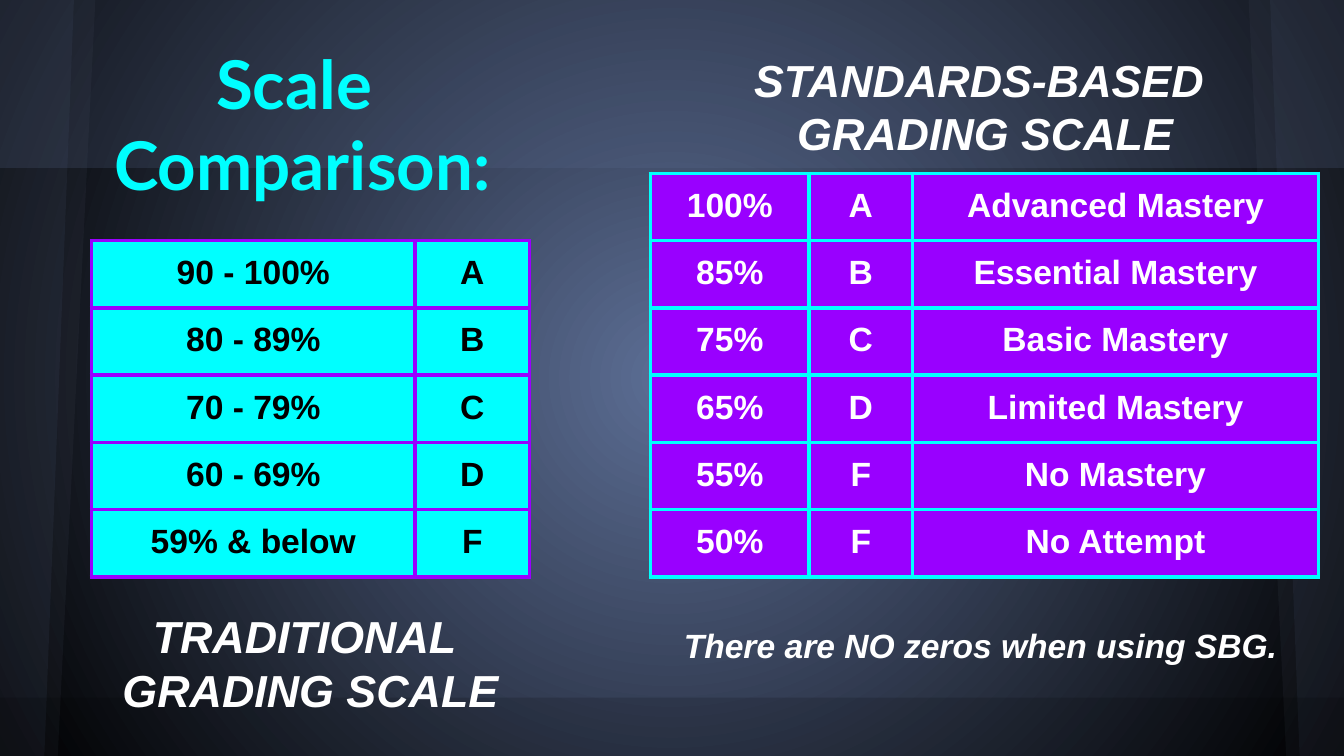
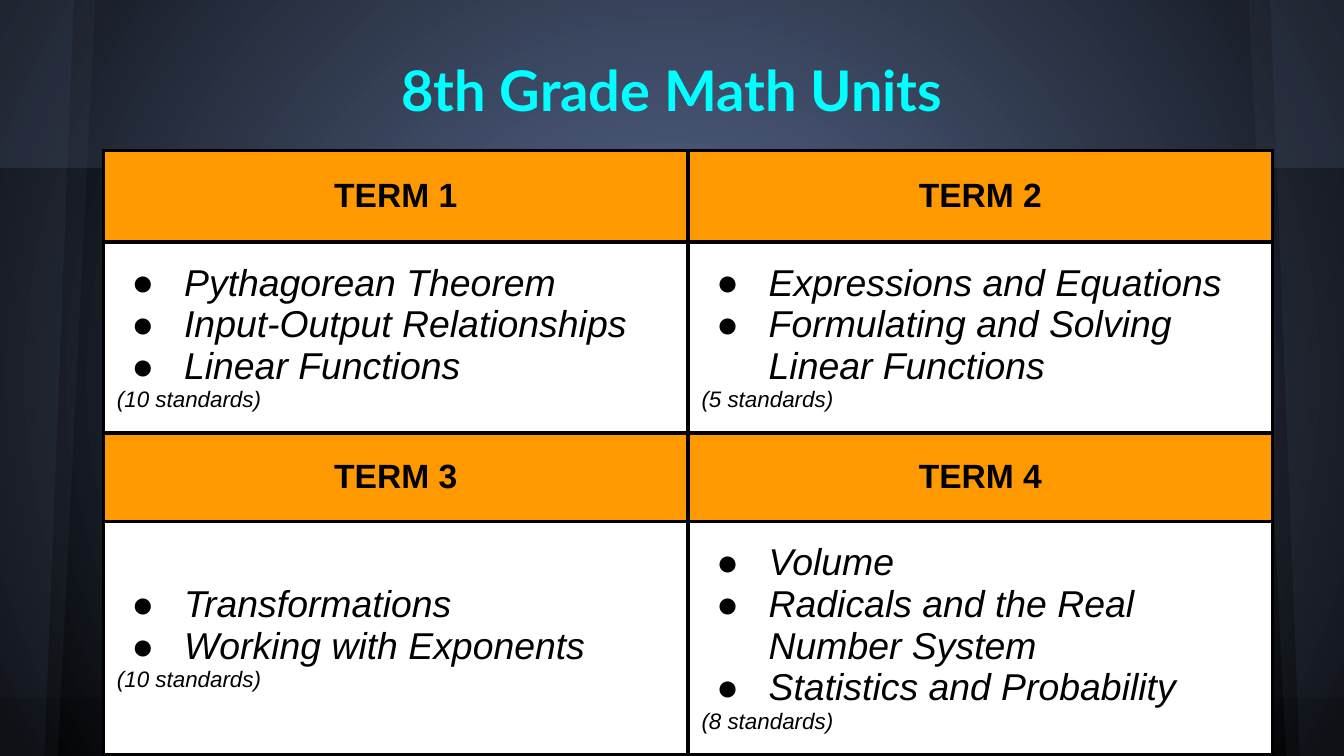
from lxml import etree
from pptx import Presentation
from pptx import util as u
from pptx.dml.color import RGBColor
from pptx.enum import shapes, text
from pptx.oxml import parse_xml
from pptx.oxml.ns import qn, nsdecls

WIDE = 10
HIGH = WIDE * 9 / 16
CYAN, VIOLET, ORANGE = "00FFFF", "9900FF", "FF9900"
BLACK, WHITE, SLATE, STEEL = "000000", "FFFFFF", "5C6E95", "5A6378"
MID = text.MSO_ANCHOR.MIDDLE
CENTER, LEFT = text.PP_ALIGN.CENTER, text.PP_ALIGN.LEFT

BANDS = [(0, 1.25, SLATE, 20), (5.19, HIGH - 5.19, BLACK, 15)]
SIDES = [(0.71, 0.43, STEEL), (0.55, 0.33, SLATE)]

OLD = [("90 - 100%", "A"), ("80 - 89%", "B"), ("70 - 79%", "C"),
       ("60 - 69%", "D"), ("59% & below", "F")]
NEW = [("100%", "A", "Advanced Mastery"), ("85%", "B", "Essential Mastery"),
       ("75%", "C", "Basic Mastery"), ("65%", "D", "Limited Mastery"),
       ("55%", "F", "No Mastery"), ("50%", "F", "No Attempt")]
SCALES = [
    ((0.68, 1.79, 3.26, 2.4), [2.41, 0.85], OLD, CYAN, VIOLET, BLACK),
    ((4.84, 1.29, 4.97, 2.88), [1.18, 0.77, 3.02], NEW, VIOLET, CYAN, WHITE),
]
LABELS = [
    ((0.68, 4.43, 3.26, 0.94), ["TRADITIONAL ", "GRADING SCALE"], 24, CENTER),
    ((4.86, 0.29, 4.94, 0.94), ["STANDARDS-BASED ", "GRADING SCALE"], 24, CENTER),
    ((4.99, 4.55, 4.66, 0.53), ["There are NO zeros when using SBG."], 18, LEFT),
]
TERMS = [
    ("TERM 1", ["Pythagorean Theorem", "Input-Output Relationships",
                "Linear Functions"], "(10 standards)"),
    ("TERM 2", ["Expressions and Equations",
                "Formulating and Solving Linear Functions"], "(5 standards)"),
    ("TERM 3", ["Transformations", "Working with Exponents"], "(10 standards)"),
    ("TERM 4", ["Volume", "Radicals and the Real Number System",
                "Statistics and Probability"], "(8 standards)"),
]


def color(code):
    return RGBColor.from_string(code)


def inches(box):
    return [u.Inches(n) for n in box]


def style(para, size, code, font="Arial", bold=True, slant=False, align=CENTER):
    para.alignment = align
    for run in para.runs:
        face = run.font
        face.size, face.name = u.Pt(size), font
        face.bold, face.italic = bold, slant
        face.color.rgb = color(code)


def pad(frame):
    frame.margin_left = frame.margin_right = u.Inches(0.1)
    frame.margin_top = frame.margin_bottom = u.Inches(0.1)


def write(slide, box, lines, size, code, anchor=text.MSO_ANCHOR.TOP, **look):
    frame = slide.shapes.add_textbox(*inches(box)).text_frame
    frame.word_wrap = True
    frame.vertical_anchor = anchor
    pad(frame)
    frame.text = "\n".join(lines)
    for para in frame.paragraphs:
        style(para, size, code, **look)


def title(slide, box, lines, size):
    write(slide, box, lines, size, CYAN, MID, font="Lato")


def tint(shape, code, alpha):
    shape.shadow.inherit = False
    shape.line.fill.background()
    shape.fill.solid()
    shape.fill.fore_color.rgb = color(code)
    tone = shape.fill._xPr.find(".//" + qn("a:srgbClr"))
    etree.SubElement(tone, qn("a:alpha"), val=str(alpha * 1000))


def backdrop(slide):
    slide._element.cSld.insert(0, parse_xml(
        f'<p:bg {nsdecls("p", "a")}><p:bgPr><a:gradFill rotWithShape="0"><a:gsLst>'
        f'<a:gs pos="0"><a:srgbClr val="{SLATE}"/></a:gs>'
        f'<a:gs pos="100000"><a:srgbClr val="{BLACK}"/></a:gs></a:gsLst>'
        '<a:path path="circle"><a:fillToRect l="50000" t="50000" r="50000" b="50000"/>'
        '</a:path></a:gradFill><a:effectLst/></p:bgPr></p:bg>'))


def band(slide, top, tall, code, alpha):
    box = inches((0, top, WIDE, tall))
    tint(slide.shapes.add_shape(shapes.MSO_SHAPE.RECTANGLE, *box), code, alpha)


def start(deck):
    slide = deck.slides.add_slide(deck.slide_layouts[6])
    backdrop(slide)
    band(slide, *BANDS[0])
    for edge, way in ((0, 1), (WIDE, -1)):
        for top, foot, code in SIDES:
            spots = [(edge + way * top, 0), (edge + way * foot, HIGH), (edge, HIGH)]
            pen = slide.shapes.build_freeform(u.Inches(edge), 0)
            pen.add_line_segments([inches(spot) for spot in spots], close=True)
            tint(pen.convert_to_shape(), code, 10)
    band(slide, *BANDS[1])
    return slide


def paint(cell, fill, rim):
    pad(cell)
    props = cell._tc.get_or_add_tcPr()
    for side in "LRTB":
        line = etree.SubElement(props, qn("a:ln" + side), w=str(u.Pt(2.25)))
        solid = etree.SubElement(line, qn("a:solidFill"))
        etree.SubElement(solid, qn("a:srgbClr"), val=rim)
    cell.fill.solid()
    cell.fill.fore_color.rgb = color(fill)


def grid(slide, box, cols, rows):
    frame = slide.shapes.add_table(len(rows), len(cols), *inches(box))
    table = frame.table
    table.first_row = table.horz_banding = False
    for col, wide in zip(table.columns, cols):
        col.width = u.Inches(wide)
    for row, tall in zip(table.rows, rows):
        row.height = u.Inches(tall)
    frame.width, frame.height = inches(box[2:])
    return table


def bullet(para):
    props = para._p.get_or_add_pPr()
    props.set("marL", str(u.Inches(0.5)))
    props.set("indent", str(u.Inches(-0.39)))
    tone = etree.SubElement(props, qn("a:buClr"))
    etree.SubElement(tone, qn("a:srgbClr"), val=BLACK)
    etree.SubElement(props, qn("a:buSzPct"), val="100000")
    etree.SubElement(props, qn("a:buFont"), typeface="Arial")
    etree.SubElement(props, qn("a:buChar"), char="●")


def compare(deck):
    slide = start(deck)
    title(slide, (0.25, 0.17, 4, 1.49), ["Scale ", "Comparison:"], 36)
    for box, cols, data, fill, rim, ink in SCALES:
        table = grid(slide, box, cols, [0.42] * len(data))
        for r, row in enumerate(data):
            for c, word in enumerate(row):
                cell = table.cell(r, c)
                paint(cell, fill, rim)
                cell.text_frame.text = word
                style(cell.text_frame.paragraphs[0], 18, ink)
    for box, lines, size, align in LABELS:
        write(slide, box, lines, size, WHITE, slant=True, align=align)


def units(deck):
    slide = start(deck)
    title(slide, (0.5, 0.19, 9, 0.94), ["8th Grade Math Units"], 30)
    table = grid(slide, (0.77, 1.12, 8.71, 4.39), [4.35] * 2,
                 [0.68, 1.42, 0.66, 1.42])
    for n, (name, topics, note) in enumerate(TERMS):
        row, col = n // 2 * 2, n % 2
        head, body = table.cell(row, col), table.cell(row + 1, col)
        for cell, fill in ((head, ORANGE), (body, WHITE)):
            paint(cell, fill, BLACK)
            cell.vertical_anchor = MID
        head.text_frame.text = name
        style(head.text_frame.paragraphs[0], 18, BLACK)
        body.text_frame.text = "\n".join(topics + [note])
        *items, last = body.text_frame.paragraphs
        for para in items:
            style(para, 20, BLACK, bold=False, slant=True, align=LEFT)
            bullet(para)
        style(last, 12, BLACK, bold=False, slant=True, align=LEFT)


def main():
    deck = Presentation()
    deck.slide_width, deck.slide_height = inches((WIDE, HIGH))
    compare(deck)
    units(deck)
    deck.save("out.pptx")


if __name__ == "__main__":
    main()
